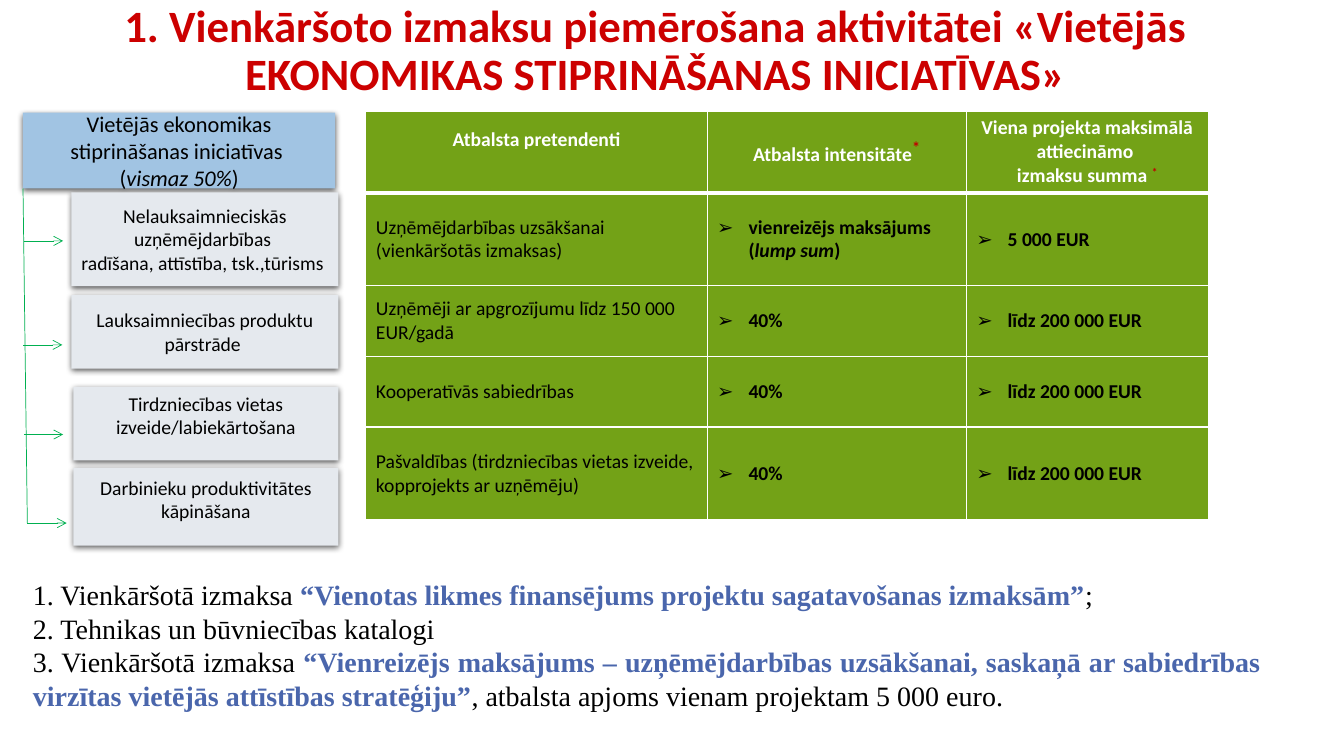
import pptx
import pptx.dml.color
import pptx.enum.shapes
import pptx.enum.text
import pptx.oxml
import pptx.oxml.ns
import pptx.util
from lxml import etree

Cm = pptx.util.Cm
Pt = pptx.util.Pt
ALIGN = pptx.enum.text.PP_ALIGN
MIDDLE = pptx.enum.text.MSO_ANCHOR.MIDDLE
qn = pptx.oxml.ns.qn
NAMESPACE = pptx.oxml.ns.nsdecls("a")

BLACK, WHITE, RED, ACCENT = "000000", "FFFFFF", "C00000", "4A66AC"
TABLE_GREEN, LINE_GREEN = "669900", "00B050"
BOLD_ACCENT = {"color": ACCENT, "bold": True}


def colour(hex_value):
    return pptx.dml.color.RGBColor.from_string(hex_value)


def write_text(frame, paragraphs, align=ALIGN.LEFT, spacing=None, **style):
    """Each paragraph is a string or a list of strings and (text, changes) pairs."""
    frame.word_wrap = True
    for index, runs in enumerate(paragraphs):
        paragraph = frame.paragraphs[0] if index == 0 else frame.add_paragraph()
        paragraph.alignment = align
        if spacing:
            paragraph.line_spacing = spacing
        for item in [runs] if isinstance(runs, str) else runs:
            text, changes = (item, {}) if isinstance(item, str) else item
            add_run(paragraph, text, **{**style, **changes})


def add_run(paragraph, text, size=14, font="Calibri", color=BLACK, bold=False,
            italic=False, baseline=0):
    run = paragraph.add_run()
    run.text = text
    run.font.name = font
    run.font.size = Pt(size)
    run.font.bold = bold
    run.font.italic = italic
    run.font.color.rgb = colour(color)
    if baseline:
        run.font._element.set("baseline", str(baseline * 1000))


def add_text_box(slide, left, top, width, height, paragraphs, anchor=None, **style):
    box = slide.shapes.add_textbox(Cm(left), Cm(top), Cm(width), Cm(height))
    if anchor is not None:
        box.text_frame.vertical_anchor = anchor
    write_text(box.text_frame, paragraphs, **style)


def add_box(slide, left, top, width, height, fill, paragraphs, bottom=0.13, **style):
    box = slide.shapes.add_shape(pptx.enum.shapes.MSO_SHAPE.RECTANGLE,
                                 Cm(left), Cm(top), Cm(width), Cm(height))
    box.fill.solid()
    box.fill.fore_color.rgb = colour(fill)
    box.line.fill.background()
    box.shadow.inherit = False
    # Soft shadow straight below the box
    effects = box._element.spPr.find(qn("a:effectLst"))
    effects.append(pptx.oxml.parse_xml(
        f'<a:outerShdw {NAMESPACE} blurRad="57150" dist="19050" dir="5400000" '
        f'algn="ctr" rotWithShape="0"><a:srgbClr val="{BLACK}">'
        '<a:alpha val="63000"/></a:srgbClr></a:outerShdw>'))
    frame = box.text_frame
    frame.vertical_anchor = MIDDLE
    frame.margin_bottom = Cm(bottom)
    write_text(frame, paragraphs, align=ALIGN.CENTER, **style)


def add_line(slide, x1, y1, x2, y2, arrow=False):
    line = slide.shapes.add_connector(pptx.enum.shapes.MSO_CONNECTOR.STRAIGHT,
                                      Cm(x1), Cm(y1), Cm(x2), Cm(y2))
    line.line.color.rgb = colour(LINE_GREEN)
    line.line.width = Pt(0.5)
    if arrow:
        etree.SubElement(line.line._get_or_add_ln(), qn("a:tailEnd"), type="arrow")
    etree.SubElement(line._element.spPr, qn("a:effectLst"))


def style_cell(cell, bottom_width, top_width):
    cell.vertical_anchor = MIDDLE
    cell.fill.solid()
    cell.fill.fore_color.rgb = colour(TABLE_GREEN)
    properties = cell._tc.get_or_add_tcPr()
    fill_color = properties.find(qn("a:solidFill"))[0]
    etree.SubElement(fill_color, qn("a:alpha"), val="91000")
    widths = {"lnL": 1, "lnR": 1, "lnT": top_width, "lnB": bottom_width}
    for index, (side, width) in enumerate(widths.items()):
        properties.insert(index, pptx.oxml.parse_xml(
            f'<a:{side} {NAMESPACE} w="{Pt(width)}"><a:solidFill>'
            f'<a:srgbClr val="{WHITE}"/></a:solidFill></a:{side}>'))


def indent_cell(cell):
    """Give the first paragraph an arrow bullet and align the rest with its text."""
    for index, paragraph in enumerate(cell.text_frame.paragraphs):
        properties = paragraph._p.get_or_add_pPr()
        properties.set("marL", str(Cm(0.79)))
        if index == 0:
            properties.set("indent", str(-Cm(0.79)))
            etree.SubElement(properties, qn("a:buFont"), typeface="Wingdings")
            properties[-1].set("typeface", "Arial")
            etree.SubElement(properties, qn("a:buChar"), char="➢")


def add_support_table(slide, left, top, widths, heights, header, rows):
    table = slide.shapes.add_table(len(heights), len(widths), Cm(left), Cm(top),
                                   Cm(sum(widths)), Cm(sum(heights))).table
    table.horz_banding = False
    for column, width in zip(table.columns, widths):
        column.width = Cm(width)
    for row, height in zip(table.rows, heights):
        row.height = Cm(height)
    for row_index, contents in enumerate([header] + rows):
        for column_index, paragraphs in enumerate(contents):
            cell = table.cell(row_index, column_index)
            style_cell(cell, bottom_width=3 if row_index == 0 else 1,
                       top_width=3 if row_index == 1 else 1)
            if row_index == 0:
                write_text(cell.text_frame, paragraphs, align=ALIGN.CENTER,
                           color=WHITE, bold=True)
            else:
                write_text(cell.text_frame, paragraphs, bold=column_index > 0)
                if column_index > 0:
                    indent_cell(cell)
    table.cell(0, 0).margin_bottom = Cm(0.75)


def add_initiatives(slide):
    # Heading box and the line that runs down from it
    add_box(slide, 0.58, 2.84, 7.87, 1.91, "A1C4E3",
            ["Vietējās ekonomikas stiprināšanas iniciatīvas ",
             ["(", ("vismaz 50%", {"italic": True}), ")"]], size=16)
    add_line(slide, 0.58, 4.75, 0.69, 13.18)
    # Left, top, height, bottom margin, arrow start, arrow height, text
    initiatives = [
        (1.8, 4.85, 2.36, 0.13, 0.6, 6.07,
         ["Nelauksaimnieciskās uzņēmējdarbības ",
          "radīšana, attīstība, tsk.,tūrisms "]),
        (1.8, 7.44, 1.85, 0.13, 0.58, 8.69, ["Lauksaimniecības produktu pārstrāde "]),
        (1.85, 9.75, 1.85, 0.55, 0.6, 10.95,
         ["Tirdzniecības vietas izveide/labiekārtošana"]),
        (1.85, 11.79, 1.96, 0.5, 0.69, 13.18,
         ["Darbinieku produktivitātes kāpināšana"]),
    ]
    right = 8.53
    for left, top, height, bottom, start, arrow_y, text in initiatives:
        add_box(slide, left, top, right - left, height, "E5E9EE", text, bottom=bottom)
        add_line(slide, start, arrow_y, start + 0.99, arrow_y, arrow=True)


def main():
    presentation = pptx.Presentation()
    presentation.slide_width = Cm(33.87)
    presentation.slide_height = Cm(19.05)
    slide = presentation.slides.add_slide(presentation.slide_layouts[6])

    add_initiatives(slide)

    # Support table
    star = {"color": RED, "baseline": 30}
    header = [["Atbalsta pretendenti"],
              [["Atbalsta intensitāte", ("*", {**star, "size": 20})]],
              ["Viena projekta maksimālā attiecināmo ",
               ["izmaksu summa ", ("*", star)]]]
    share, limit = ["40%"], ["līdz 200 000 EUR"]
    rows = [
        [["Uzņēmējdarbības uzsākšanai", "(vienkāršotās izmaksas)"],
         ["vienreizējs maksājums ", ["(", ("lump sum", {"italic": True}), ")"]],
         ["5 000 EUR"]],
        [["Uzņēmēji ar apgrozījumu līdz 150 000 EUR/gadā"], share, limit],
        [["Kooperatīvās sabiedrības"], share, limit],
        [["Pašvaldības (tirdzniecības vietas izveide, kopprojekts ar uzņēmēju)"],
         share, limit],
    ]
    add_support_table(slide, 9.22, 2.8, [8.6, 6.53, 6.1],
                      [2.06, 2.34, 1.78, 1.78, 2.34], header, rows)

    # Simplified costs
    add_text_box(slide, 0.58, 14.43, 31.45, 3.68, [
        ["1. Vienkāršotā izmaksa ",
         ("“Vienotas likmes finansējums projektu sagatavošanas izmaksām”", BOLD_ACCENT),
         ";"],
        "2. Tehnikas un būvniecības katalogi ",
        ["3. Vienkāršotā izmaksa ",
         ("“Vienreizējs maksājums – uzņēmējdarbības uzsākšanai, saskaņā ar sabiedrības "
          "virzītas vietējās attīstības stratēģiju”", BOLD_ACCENT),
         ", atbalsta apjoms vienam projektam 5 000 euro. "],
    ], align=ALIGN.JUSTIFY, size=20, font="Times New Roman")

    # Title
    add_text_box(slide, 2.29, -0.05, 28.47, 2.72,
                 ["1. Vienkāršoto izmaksu piemērošana aktivitātei «Vietējās "
                  "EKONOMIKAS STIPRINĀŠANAS INICIATĪVAS»"],
                 anchor=MIDDLE, align=ALIGN.CENTER, spacing=0.9,
                 size=32, color="CC0000", bold=True)

    presentation.save("out.pptx")


if __name__ == "__main__":
    main()
